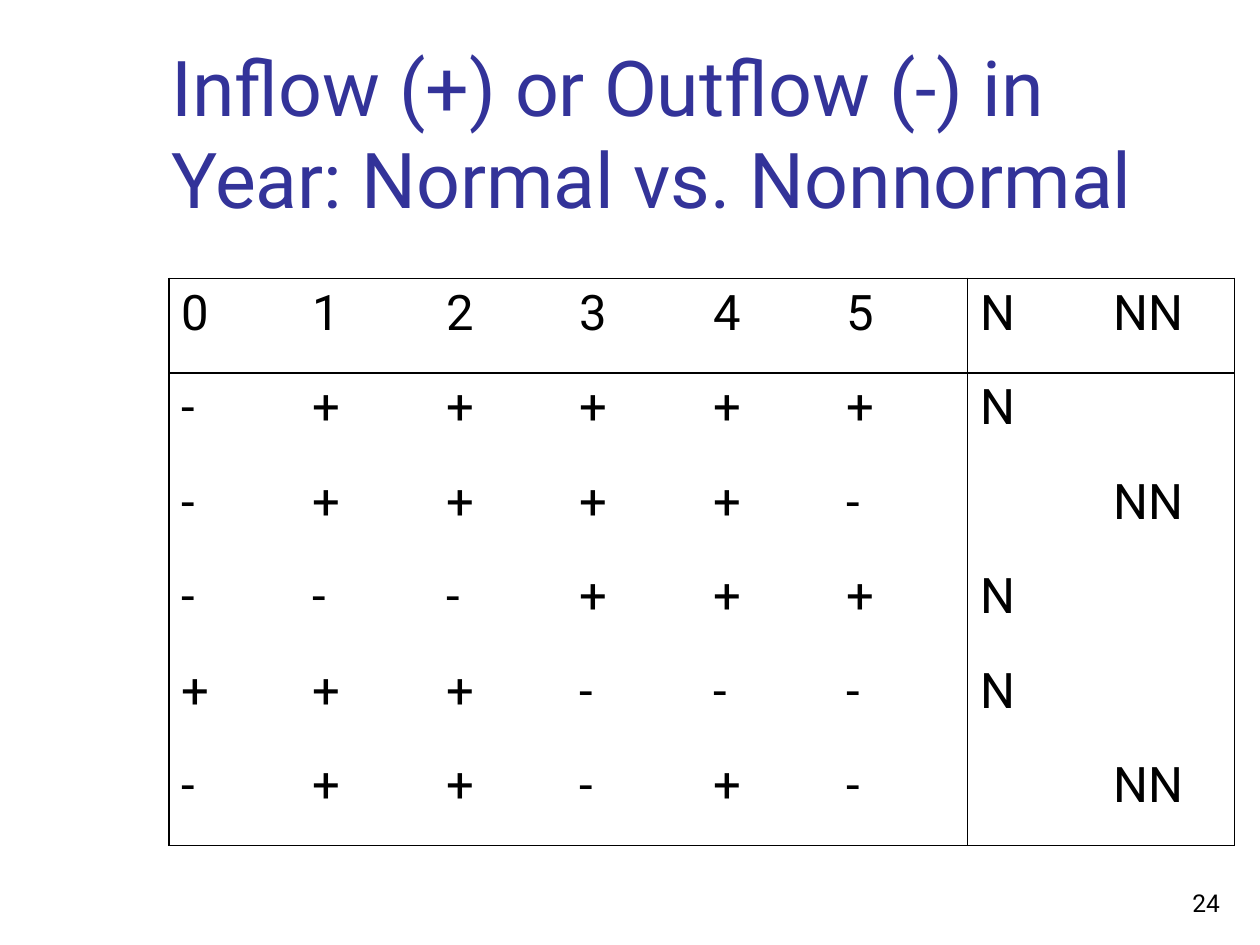
from lxml.etree import SubElement
from pptx import Presentation
from pptx.dml.color import RGBColor
from pptx.enum.text import MSO_ANCHOR as Anchor, MSO_AUTO_SIZE as AutoSize, PP_ALIGN as Align
from pptx.oxml.ns import qn
from pptx.util import Inches, Pt

BLACK = RGBColor(0x00, 0x00, 0x00)
INDIGO = RGBColor(0x33, 0x33, 0x99)
FONT = "Roboto"

YEARS = 6
FLOWS = [
    ("-+++++", "N"),
    ("-++++-", "NN"),
    ("---+++", "N"),
    ("+++---", "N"),
    ("-++-+-", "NN"),
]


def add_text(paragraph, text, size, color=BLACK):
    """Add one formatted run to a paragraph."""
    run = paragraph.add_run()
    run.text = text
    run.font.name = FONT
    run.font.size = Pt(size)
    run.font.color.rgb = color


def set_borders(cell, ruled_sides):
    """Rule the named sides (L, R, T, B) of a cell and clear the others."""
    properties = cell._tc.get_or_add_tcPr()
    for side in "LRTB":
        line = SubElement(properties, qn(f"a:ln{side}"), w=str(Pt(1)))
        if side in ruled_sides:
            fill = SubElement(line, qn("a:solidFill"))
            SubElement(fill, qn("a:srgbClr"), val=str(BLACK))
        else:
            SubElement(line, qn("a:noFill"))


def place_title(slide, left, top, width, height):
    """Move, format and fill the title placeholder."""
    title = slide.shapes.title
    title.left, title.top, title.width, title.height = left, top, width, height
    frame = title.text_frame
    frame.word_wrap = True
    frame.auto_size = AutoSize.NONE
    frame.vertical_anchor = Anchor.BOTTOM
    heading = frame.paragraphs[0]
    heading.alignment = Align.LEFT
    add_text(heading, "Inflow (+) or Outflow (-) in Year: Normal vs. Nonnormal", 44, INDIGO)


def place_flow_table(slide, left, top, width, height):
    """Tabulate yearly flow signs beside the normal and nonnormal verdicts."""
    kinds = ["N", "NN"]
    rows = [[str(year) for year in range(YEARS)] + kinds]
    rows += [list(signs) + [kind if kind == verdict else "" for kind in kinds]
             for signs, verdict in FLOWS]
    row_count, column_count = len(rows), len(rows[0])

    table = slide.shapes.add_table(row_count, column_count, left, top, width, height).table
    table.first_row = table.horz_banding = False
    year_width = Inches(1.06)
    for column in table.columns:
        column.width = year_width
    table.columns[0].width = width - year_width * (column_count - 1)

    for r, row in enumerate(rows):
        for c, text in enumerate(row):
            cell = table.cell(r, c)
            ruled = {"L": c in (0, YEARS), "R": c in (YEARS - 1, column_count - 1),
                     "T": r in (0, 1), "B": r in (0, row_count - 1)}
            set_borders(cell, [side for side, shown in ruled.items() if shown])
            cell.fill.background()
            if text:
                add_text(cell.text_frame.paragraphs[0], text, 28)


def place_page_number(slide, left, top, width, height):
    """Set the page number at the lower right of its box."""
    frame = slide.shapes.add_textbox(left, top, width, height).text_frame
    frame.word_wrap = True
    frame.vertical_anchor = Anchor.BOTTOM
    number = frame.paragraphs[0]
    number.alignment = Align.RIGHT
    add_text(number, "24", 14)


def main():
    """Build and save the slide."""
    deck = Presentation()
    deck.slide_width, deck.slide_height = Inches(10), Inches(7.5)
    slide = deck.slides.add_slide(deck.slide_layouts[5])
    place_page_number(slide, Inches(7.7), Inches(6.83), Inches(2.08), Inches(0.5))
    place_title(slide, Inches(1.26), Inches(0.23), Inches(8.52), Inches(1.6))
    place_flow_table(slide, Inches(1.34), Inches(2.21), Inches(8.46), Inches(4.5))
    deck.save("out.pptx")


if __name__ == "__main__":
    main()
